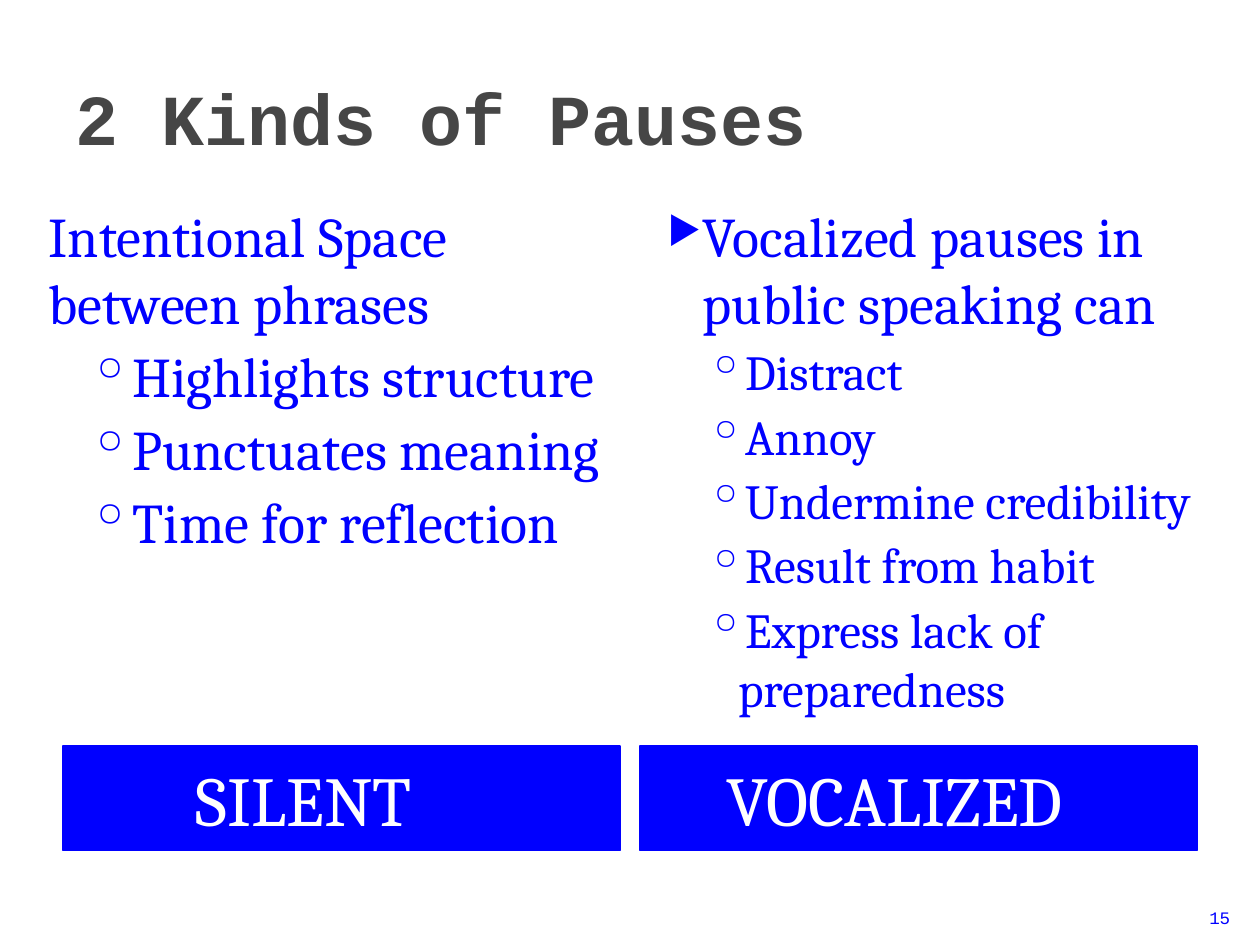
from lxml import etree
from pptx import Presentation
from pptx.dml.color import RGBColor
from pptx.enum import shapes, text
from pptx.oxml.ns import qn
from pptx.util import Cm, Pt

BLUE, WHITE, GRAY = "0000FF", "FFFFFF", "464646"
SERIF, MONO = "Cambria", "Courier New"


def color(value):
    """Turn a hex string into a colour."""
    return RGBColor.from_string(value)


def format_runs(paragraph, size, font, hex_color, bold=False):
    """Set the look of every run in a paragraph."""
    for run in paragraph.runs:
        run.font.size, run.font.name, run.font.bold = Pt(size), font, bold
        run.font.color.rgb = color(hex_color)


def set_indent(paragraph, left, first=0):
    """Set the left margin and first-line indent in centimetres."""
    properties = paragraph._p.get_or_add_pPr()
    properties.set("marL", str(Cm(left)))
    properties.set("indent", str(Cm(first)))


def add_bullet(paragraph, character, percent=100):
    """Give a paragraph a blue bullet character."""
    properties = paragraph._p.get_or_add_pPr()
    bullet_color = etree.SubElement(properties, qn("a:buClr"))
    etree.SubElement(bullet_color, qn("a:srgbClr"), val=BLUE)
    etree.SubElement(properties, qn("a:buSzPct"), val=str(percent * 1000))
    etree.SubElement(properties, qn("a:buChar"), char=character)


def add_text_frame(slide, box, anchor):
    """Add a wrapping text box and return its text frame."""
    text_frame = slide.shapes.add_textbox(*map(Cm, box)).text_frame
    text_frame.word_wrap = True
    text_frame.vertical_anchor = anchor
    return text_frame


def add_title(slide, box, title):
    """Place the slide title."""
    text_frame = add_text_frame(slide, box, text.MSO_ANCHOR.MIDDLE)
    text_frame.text = title
    format_runs(text_frame.paragraphs[0], 41, MONO, GRAY, bold=True)


def add_banner(slide, box, label, indent):
    """Place a filled banner with an indented label."""
    shape = slide.shapes.add_shape(shapes.MSO_SHAPE.RECTANGLE, *map(Cm, box))
    shape.shadow.inherit = False
    shape.fill.solid()
    shape.fill.fore_color.rgb = color(BLUE)
    shape.line.color.rgb = color(BLUE)
    shape.line.width = Pt(0.75)
    text_frame = shape.text_frame
    text_frame.margin_left = Cm(0.51)
    text_frame.vertical_anchor = text.MSO_ANCHOR.MIDDLE
    text_frame.text = label
    paragraph = text_frame.paragraphs[0]
    paragraph.alignment = text.PP_ALIGN.LEFT
    set_indent(paragraph, indent)
    format_runs(paragraph, 40, SERIF, WHITE)


def add_column(slide, box, heading, points, point_size, marked):
    """Place a heading followed by its bulleted points."""
    text_frame = add_text_frame(slide, box, text.MSO_ANCHOR.TOP)
    text_frame.text = heading
    paragraph = text_frame.paragraphs[0]
    if marked:
        set_indent(paragraph, 1.02, -0.71)
        add_bullet(paragraph, "▶", 68)
    else:
        set_indent(paragraph, 0.3)
    format_runs(paragraph, 32, SERIF, BLUE)
    for point in points:
        paragraph = text_frame.add_paragraph()
        paragraph.text = point
        paragraph.level = 1
        paragraph.space_before = Pt(3.2)
        set_indent(paragraph, 1.73, -0.64)
        add_bullet(paragraph, "◦")
        format_runs(paragraph, point_size, SERIF, BLUE)


def add_slide_number(slide, box, number):
    """Place the slide number."""
    text_frame = add_text_frame(slide, box, text.MSO_ANCHOR.BOTTOM)
    text_frame.text = number
    paragraph = text_frame.paragraphs[0]
    paragraph.alignment = text.PP_ALIGN.RIGHT
    format_runs(paragraph, 10, MONO, BLUE)


def main():
    """Build and save the slide."""
    presentation = Presentation()
    presentation.slide_width, presentation.slide_height = Cm(25.4), Cm(19.05)
    slide = presentation.slides.add_slide(presentation.slide_layouts[6])
    add_title(slide, (1.27, 0.76, 22.86, 3.18), "2 Kinds of Pauses")
    add_banner(slide, (1.27, 15.04, 11.23, 2.11), "SILENT", 2.17)
    add_banner(slide, (12.9, 15.04, 11.23, 2.11), "VOCALIZED", 1.24)
    add_column(slide, (0.43, 3.94, 12.07, 11.02),
               "Intentional Space between phrases",
               ["Highlights structure", "Punctuates meaning",
                "Time for reflection"], 32, marked=False)
    add_column(slide, (12.9, 3.94, 12.5, 11.02),
               "Vocalized pauses in public speaking can",
               ["Distract", "Annoy", "Undermine credibility",
                "Result from habit", "Express lack of preparedness"],
               28, marked=True)
    add_slide_number(slide, (24.03, 17.81, 1.02, 1.02), "15")
    presentation.save("out.pptx")


if __name__ == "__main__":
    main()
